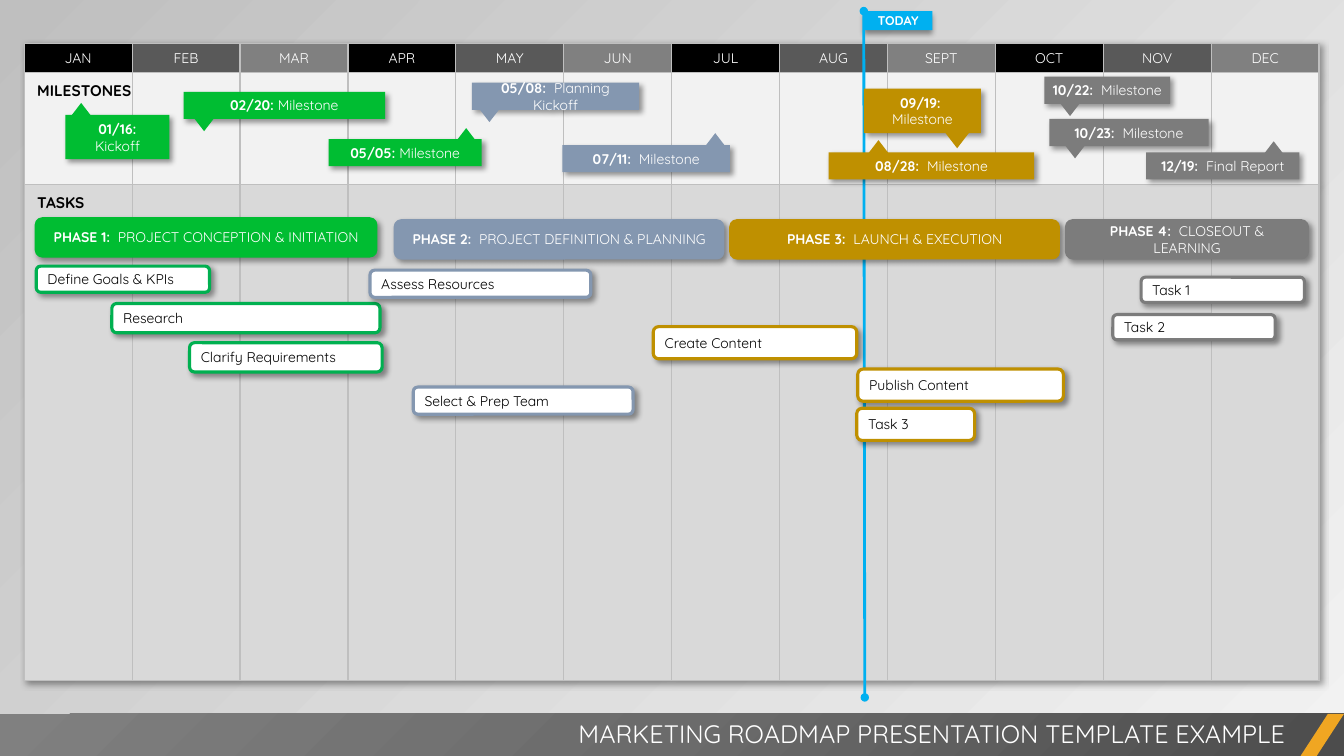
from lxml import etree
from pptx import Presentation
from pptx.dml.color import RGBColor
from pptx.enum.shapes import MSO_CONNECTOR, MSO_SHAPE
from pptx.enum.text import MSO_ANCHOR, MSO_AUTO_SIZE, PP_ALIGN
from pptx.oxml import parse_xml
from pptx.oxml.ns import nsdecls, qn
from pptx.util import Pt

LEFT, MID, RIGHT = PP_ALIGN.LEFT, PP_ALIGN.CENTER, PP_ALIGN.RIGHT
TOP, CENTER = MSO_ANCHOR.TOP, MSO_ANCHOR.MIDDLE
FIXED = MSO_AUTO_SIZE.NONE
RECT, ROUND = MSO_SHAPE.RECTANGLE, MSO_SHAPE.ROUNDED_RECTANGLE
WEDGE, SLANT = MSO_SHAPE.ISOSCELES_TRIANGLE, MSO_SHAPE.PARALLELOGRAM
STRAIGHT = MSO_CONNECTOR.STRAIGHT

FONT = "Quicksand"
BLACK = RGBColor(0, 0, 0)
WHITE = RGBColor(255, 255, 255)
DARK = RGBColor(0x59, 0x59, 0x59)
GRAY = RGBColor(0x80, 0x80, 0x80)
PALE = RGBColor(0xF2, 0xF2, 0xF2)
SILVER = RGBColor(0xD9, 0xD9, 0xD9)
EDGE = RGBColor(0xBF, 0xBF, 0xBF)
GREEN = RGBColor(0x00, 0xBD, 0x32)
LEAF = RGBColor(0x00, 0xB0, 0x50)
SLATE = RGBColor(0x84, 0x97, 0xB0)
GOLD = RGBColor(0xBF, 0x90, 0x00)
STEEL = RGBColor(0x7C, 0x7C, 0x7C)
SKY = RGBColor(0x00, 0xB0, 0xF0)
AMBER = RGBColor(0xF0, 0xA6, 0x22)
COAL = RGBColor(0x4C, 0x4C, 0x4C)
SMOKE = RGBColor(0x6B, 0x6B, 0x6B)

MONTHS = "JAN FEB MAR APR MAY JUN JUL AUG SEPT OCT NOV DEC".split()
ROWS = (20.9, 79.9, 354.2)

MARKS = [
    ("05/05: |Milestone", GREEN, (217.4, 47.5, 109.4, 19.4), (307.4, 39.6)),
    ("01/16:\n|Kickoff", GREEN, (29.5, 30.2, 74.2, 31.7), (32.4, 21.6)),
    ("02/20: |Milestone", GREEN, (113.8, 13.7, 144, 19.4), (120.2, 31)),
    ("05/08:  |Planning Kickoff", SLATE, (319.7, 7.2, 119.5, 19.4), (324, 24.5)),
    ("07/11:  |Milestone", SLATE, (384.5, 51.8, 119.5, 19.4), (485.3, 43.2)),
    ("09/19:  |Milestone", GOLD, (599.8, 11.5, 83.5, 31.7), (658.1, 43.2)),
    ("08/28:  |Milestone", GOLD, (574.6, 56.9, 146.9, 19.4), (601.9, 48.2)),
    ("10/22:  |Milestone", STEEL, (728.6, 2.9, 90, 19.4), (738.7, 20.2)),
    ("10/23:  |Milestone", STEEL, (732.2, 33.1, 113.8, 19.4), (742.3, 50.4)),
    ("12/19:  |Final Report", STEEL, (801.4, 56.9, 109.4, 19.4), (884.2, 49)),
]
PHASES = [
    ("PHASE 1:  |PROJECT CONCEPTION & INITIATION", GREEN, (8.6, 24.5, 242.6, 26.6)),
    ("PHASE 2:  |PROJECT DEFINITION & PLANNING", SLATE, (265, 25.9, 234, 26.6)),
    ("PHASE 3:  |LAUNCH & EXECUTION", GOLD, (504.7, 25.9, 234, 26.6)),
    ("PHASE 4:  |CLOSEOUT & LEARNING", STEEL, (744.5, 25.9, 172.1, 26.6)),
]
TASKS = [
    ("Research", LEAF, (62.6, 85, 191.5, 20.9)),
    ("Select & Prep Team", SLATE, (277.9, 144.7, 157, 19.4)),
    ("Publish Content", GOLD, (595.4, 131.8, 146.9, 23)),
    ("Task 2", STEEL, (777.6, 92.9, 115.9, 18)),
    ("Define Goals & KPIs", LEAF, (8.6, 58.3, 123.8, 18.7)),
    ("Assess Resources", SLATE, (247, 61.2, 157.7, 19.4)),
    ("Create Content", GOLD, (449.3, 101.5, 145.4, 23)),
    ("Task 1", STEEL, (797.8, 66.2, 116.6, 18)),
    ("Task 3", GOLD, (594.7, 159.8, 84.2, 23)),
    ("Clarify Requirements", LEAF, (118.1, 113, 137.5, 20.9)),
]


def points(box):
    return [Pt(n) for n in box]


def shift(box, part):
    return (box[0] + part[0], box[1] + part[1], *part[2:])


def shade(parent, angle):
    cast = etree.SubElement(parent, qn("a:outerShdw"), blurRad=str(Pt(4)),
                            dist=str(Pt(3)), dir=str(angle * 60000),
                            algn="tl", rotWithShape="0")
    tint = etree.SubElement(cast, qn("a:srgbClr"), val=str(BLACK))
    etree.SubElement(tint, qn("a:alpha"), val="40000")


def write(frame, text, size, color, align, anchor=CENTER):
    frame.word_wrap = True
    frame.auto_size = FIXED
    frame.vertical_anchor = anchor
    for row, line in enumerate(text.split("\n")):
        para = frame.add_paragraph() if row else frame.paragraphs[0]
        para.alignment = align
        font = para.font
        font.name, font.size, font.color.rgb = FONT, Pt(size), color
        for spot, words in enumerate(line.split("|")):
            if words:
                run = para.add_run()
                run.text = words
                run.font.bold = spot == 0


def block(slide, kind, box, fill, edge=None, angle=None):
    shape = slide.shapes.add_shape(kind, *points(box))
    shape.shadow.inherit = False
    shape.fill.solid()
    shape.fill.fore_color.rgb = fill
    if edge is None:
        shape.line.fill.background()
    else:
        shape.line.color.rgb = edge
        shape.line.width = Pt(2.25)
    if angle is not None:
        shade(shape.element.spPr.find(qn("a:effectLst")), angle)
    return shape


def label(slide, box, text):
    area = slide.shapes.add_textbox(*points(box))
    write(area.text_frame, text, 11, BLACK, LEFT, TOP)


def footer(slide, box):
    x, y, wide, high = box
    bar = block(slide, RECT, box, GRAY)
    props = bar.element.spPr
    stops = "".join(f'<a:gs pos="{spot}"><a:srgbClr val="{tint}"/></a:gs>'
                    for spot, tint in ((0, COAL), (50000, SMOKE), (100000, GRAY)))
    blend = parse_xml(f'<a:gradFill {nsdecls("a")}><a:gsLst>{stops}</a:gsLst>'
                      '<a:path path="circle"><a:fillToRect l="100000" t="100000"/>'
                      '</a:path></a:gradFill>')
    props.replace(props.find(qn("a:solidFill")), blend)
    slash = block(slide, SLANT, (x + wide - 31, y, 31, high), AMBER)
    slash.adjustments[0] = 0.65
    title = slide.shapes.title
    title.left, title.top, title.width, title.height = points(
        (x + 378, y - 0.5, 547.2, 28.8))
    write(title.text_frame, "|MARKETING ROADMAP PRESENTATION TEMPLATE EXAMPLE",
          18, WHITE, RIGHT, TOP)
    slide.shapes.element.append(title.element)


def board(slide, box):
    frame = slide.shapes.add_table(len(ROWS), len(MONTHS), *points(box))
    table = frame.table
    table.first_row = table.horz_banding = False
    cast = etree.Element(qn("a:effectLst"))
    shade(cast, 45)
    next(frame.element.iter(qn("a:tblPr"))).insert(0, cast)
    for row, high in zip(table.rows, ROWS):
        row.height = Pt(high)
    for col, month in enumerate(MONTHS):
        table.columns[col].width = Pt(box[2] / len(MONTHS))
        fills = ((BLACK, DARK, GRAY)[col % 3], PALE, SILVER)
        for row, fill in enumerate(fills):
            cell = table.cell(row, col)
            cell.vertical_anchor = CENTER if row == 0 else TOP
            props = cell.fill and next(cell.text_frame._txBody.getparent().iter(qn("a:tcPr")))
            for side in ("lnL", "lnR", "lnT", "lnB"):
                props.append(parse_xml(
                    f'<a:{side} {nsdecls("a")} w="{Pt(1)}"><a:solidFill>'
                    f'<a:srgbClr val="{EDGE}"/></a:solidFill></a:{side}>'))
            cell.fill.solid()
            cell.fill.fore_color.rgb = fill
        para = table.cell(0, col).text_frame.paragraphs[0]
        para.text, para.alignment = month, MID
        font = para.font
        font.name, font.size, font.color.rgb = FONT, Pt(10), WHITE


def today(slide, box):
    x, y, wide, high = box
    flag = block(slide, RECT, (x, y, 49, 13.7), SKY, angle=90)
    write(flag.text_frame, "TODAY", 9, WHITE, MID)
    line = slide.shapes.add_connector(STRAIGHT, *points((x, y, x + wide, y + high)))
    line.line.color.rgb = SKY
    line.line.width = Pt(2)
    props = line.element.spPr
    for end in ("a:headEnd", "a:tailEnd"):
        etree.SubElement(props.find(qn("a:ln")), qn(end), type="oval")
    etree.SubElement(props, qn("a:effectLst"))


def events(slide, box):
    label(slide, shift(box, (2.2, 2.2, 95.8, 20.9)), "MILESTONES")
    for text, color, part, tip in MARKS:
        card = block(slide, RECT, shift(box, part), color, angle=45)
        frame = card.text_frame
        frame.margin_left = frame.margin_right = Pt(3.6)
        frame.margin_top = frame.margin_bottom = Pt(3.6)
        write(frame, text, 10, WHITE, MID)
        wedge = block(slide, WEDGE, shift(box, (*tip, 16.6, 10.8)), color)
        wedge.rotation = 180 if tip[1] > part[1] else 0


def plan(slide, box):
    label(slide, shift(box, (2.2, 2.9, 95.8, 20.9)), "TASKS")
    for text, color, part in PHASES:
        bar = block(slide, ROUND, shift(box, part), color, color, 45)
        write(bar.text_frame, text, 10, WHITE, MID)
    for text, color, part in TASKS:
        bar = block(slide, ROUND, shift(box, part), WHITE, color, 45)
        write(bar.text_frame, "|" + text, 10, BLACK, LEFT)


def main():
    deck = Presentation()
    deck.slide_width, deck.slide_height = Pt(960), Pt(540)
    slide = deck.slides.add_slide(deck.slide_layouts[5])
    back = slide.background.fill
    back.gradient()
    back.gradient_angle = 135
    for stop, tint in zip(back.gradient_stops, (PALE, EDGE)):
        stop.color.rgb = tint
    footer(slide, (0, 510, 960, 30))
    board(slide, (17.3, 31, 925.2, sum(ROWS)))
    today(slide, (617, 7.9, 0.7, 490.3))
    events(slide, (17.3, 51.9, 925.2, ROWS[1]))
    plan(slide, (17.3, 131.8, 925.2, ROWS[2]))
    deck.save("out.pptx")


if __name__ == "__main__":
    main()
